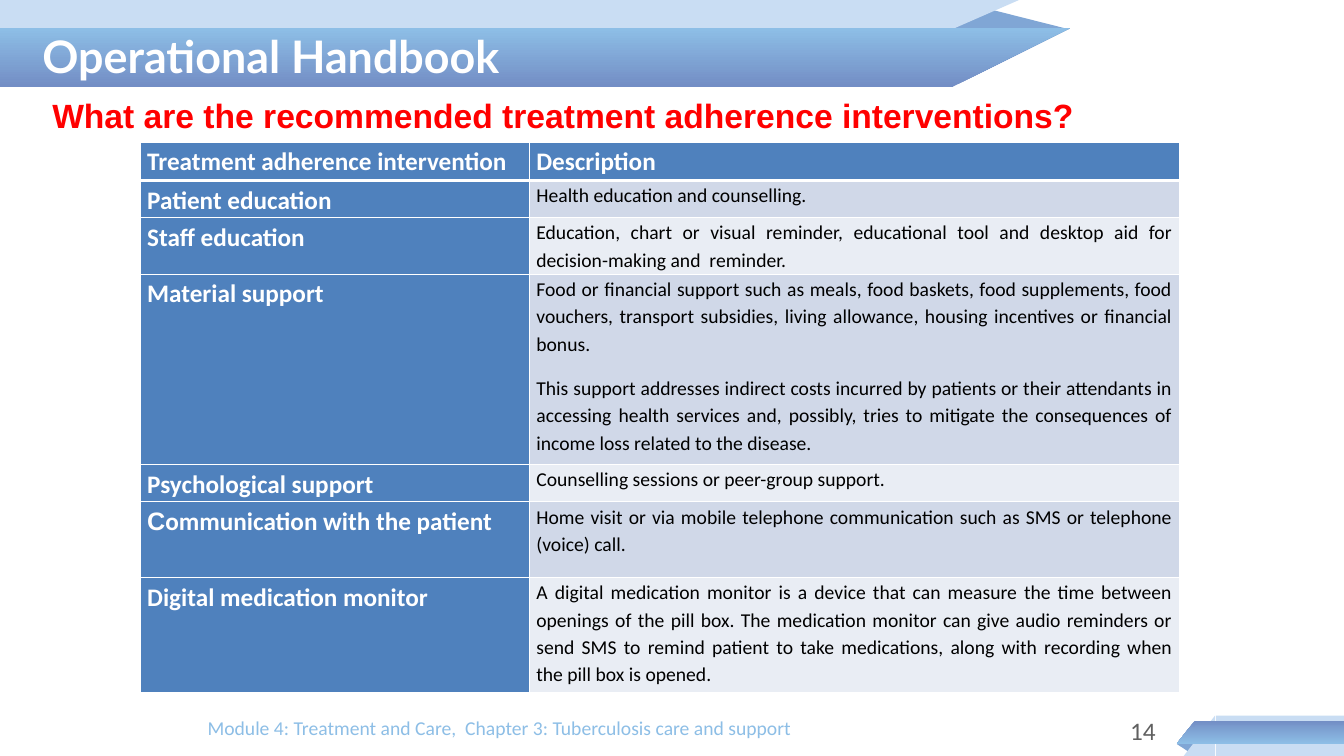
from lxml import etree
from pptx import Presentation
from pptx.dml.color import RGBColor
from pptx.enum.shapes import MSO_SHAPE
from pptx.enum.text import MSO_ANCHOR, PP_ALIGN
from pptx.oxml.ns import qn
from pptx.util import Inches, Pt

RECTANGLE = MSO_SHAPE.RECTANGLE
TRIANGLE = MSO_SHAPE.ISOSCELES_TRIANGLE
RIGHT_TRIANGLE = MSO_SHAPE.RIGHT_TRIANGLE
LEFT, RIGHT, JUSTIFY = PP_ALIGN.LEFT, PP_ALIGN.RIGHT, PP_ALIGN.JUSTIFY
TOP, MIDDLE = MSO_ANCHOR.TOP, MSO_ANCHOR.MIDDLE

COLORS = {
    "white": "FFFFFF", "black": "000000", "red": "FF0000", "gray": "606060",
    "pale": "C9DDF3", "fold": "80A6D5", "deep": "738EC5", "sky": "8DBEE6",
    "header": "4F81BD", "odd": "D0D8E8", "even": "E9EDF4",
}


def style_run(span, size, color, bold=False, font="Calibri"):
    span.font.size = Pt(size)
    span.font.bold = bold
    span.font.name = font
    span.font.color.rgb = RGBColor.from_string(COLORS[color])


def fill_box(box, place, text, align, anchor, style):
    box.left, box.top, box.width, box.height = [Inches(n) for n in place]
    frame = box.text_frame
    frame.word_wrap = True
    frame.vertical_anchor = anchor
    frame.text = text
    frame.paragraphs[0].alignment = align
    style_run(frame.paragraphs[0].runs[0], *style)


deck = Presentation()
deck.slide_width, deck.slide_height = Inches(13.33), Inches(7.5)
page = deck.slides.add_slide(deck.slide_layouts[5])

ribbons = [
    (TRIANGLE, (9.43, 0.09, 1.17, 0.2), "fold", 0, ""),
    (RECTANGLE, (0, -0.01, 8.15, 0.87), "pale", 180, "flipH"),
    (RIGHT_TRIANGLE, (8.14, -0.01, 1.99, 0.87), "pale", 180, "flipH"),
    (RECTANGLE, (0, 0.28, 9.45, 0.58), "gradient", 180, "flipH"),
    (RIGHT_TRIANGLE, (9.45, 0.28, 1.16, 0.58), "gradient", 180, "flipH"),
    (TRIANGLE, (11.67, 7.38, 0.18, 0.08), "fold", 180, ""),
    (RECTANGLE, (12.06, 7.1, 1.27, 0.4), "pale", 180, "flipV"),
    (RIGHT_TRIANGLE, (11.74, 7.1, 0.31, 0.4), "pale", 180, "flipV"),
    (RECTANGLE, (11.85, 7.15, 1.48, 0.23), "gradient", 180, "flipV"),
    (RIGHT_TRIANGLE, (11.67, 7.15, 0.18, 0.23), "gradient", 180, "flipV"),
]
for kind, place, color, turn, flip in ribbons:
    ribbon = page.shapes.add_shape(kind, *[Inches(n) for n in place])
    ribbon.shadow.inherit = False
    ribbon.line.fill.background()
    ribbon.rotation = turn
    if flip:
        ribbon._element.spPr.find(qn("a:xfrm")).set(flip, "1")
    if kind == TRIANGLE:
        ribbon.adjustments[0] = 0.324
    if color == "gradient":
        ribbon.fill.gradient()
        ribbon.fill.gradient_angle = 270
        for stop, name in zip(ribbon.fill.gradient_stops, ("deep", "sky")):
            stop.color.rgb = RGBColor.from_string(COLORS[name])
    else:
        ribbon.fill.solid()
        ribbon.fill.fore_color.rgb = RGBColor.from_string(COLORS[color])

title = page.shapes.title
page.shapes._spTree.append(title._element)
fill_box(title, (0.32, 0.11, 8.02, 0.89), "Operational Handbook",
         LEFT, MIDDLE, (32, "white", True, "Lato"))

labels = [
    ((0.42, 0.89, 12.68, 0.58),
     "What are the recommended treatment adherence interventions?",
     LEFT, (24, "red", True, "Arial")),
    ((10.13, 7.05, 1.43, 0.4), "14", RIGHT, (18, "gray")),
    ((1.96, 7.05, 8.02, 0.4),
     "Module 4: Treatment and Care,  Chapter 3: Tuberculosis care and support",
     LEFT, (14, "sky")),
]
for place, text, align, style in labels:
    label = page.shapes.add_textbox(0, 0, 0, 0)
    fill_box(label, place, text, align, TOP, style)

interventions = [
    ("Treatment adherence intervention", "Description", 0.38),
    ("Patient education", "Health education and counselling.", 0.37),
    ("Staff education",
     "Education, chart or visual reminder, educational tool and desktop aid for "
     "decision-making and  reminder.", 0.56),
    ("Material support",
     "Food or financial support such as meals, food baskets, food supplements, "
     "food vouchers, transport subsidies, living allowance, housing incentives "
     "or financial bonus.\n"
     "This support addresses indirect costs incurred by patients or their "
     "attendants in accessing health services and, possibly, tries to mitigate "
     "the consequences of income loss related to the disease.", 1.89),
    ("Psychological support", "Counselling sessions or peer-group support.", 0.37),
    ("Communication with the patient",
     "Home visit or via mobile telephone communication such as SMS or telephone "
     "(voice) call.", 0.75),
    ("Digital medication monitor",
     "A digital medication monitor is a device that can measure the time between "
     "openings of the pill box. The medication monitor can give audio reminders "
     "or send SMS to remind patient to take medications, along with recording "
     "when the pill box is opened.", 1.14),
]
table = page.shapes.add_table(len(interventions), 2, Inches(1.39), Inches(1.41),
                              Inches(10.31), Inches(5.46)).table
table.columns[0].width, table.columns[1].width = Inches(3.86), Inches(6.45)

for row, (name, description, height) in enumerate(interventions):
    table.rows[row].height = Inches(height)
    for column, text in enumerate((name, description)):
        cell = table.cell(row, column)
        heading = row == 0 or column == 0
        cell.margin_left = cell.margin_right = Inches(0.07)
        cell.margin_top = cell.margin_bottom = 0
        shade = "header" if heading else "odd" if row % 2 else "even"
        cell.fill.solid()
        cell.fill.fore_color.rgb = RGBColor.from_string(COLORS[shade])
        cell.text_frame.text = text
        for index, para in enumerate(cell.text_frame.paragraphs):
            para.alignment = LEFT if heading else JUSTIFY
            para.line_spacing = 1.15
            para.space_before = Pt(12 if index else 0)
            style_run(para.runs[0], 18 if heading else 14,
                      "white" if heading else "black", heading)
        for order, side in enumerate(("lnL", "lnR", "lnT", "lnB")):
            thick = (row, side) in ((0, "lnB"), (1, "lnT"))
            border = etree.Element(qn("a:" + side), w=str(Pt(3 if thick else 1)))
            paint = etree.SubElement(border, qn("a:solidFill"))
            etree.SubElement(paint, qn("a:srgbClr"), val=COLORS["white"])
            cell._tc.tcPr.insert(order, border)

communication = table.cell(5, 0).text_frame.paragraphs[0]
communication.runs[0].text = "C"
communication.runs[0].font.name = "Arial"
ending = communication.add_run()
ending.text = "ommunication with the patient"
style_run(ending, 18, "white", True)

deck.save("out.pptx")
